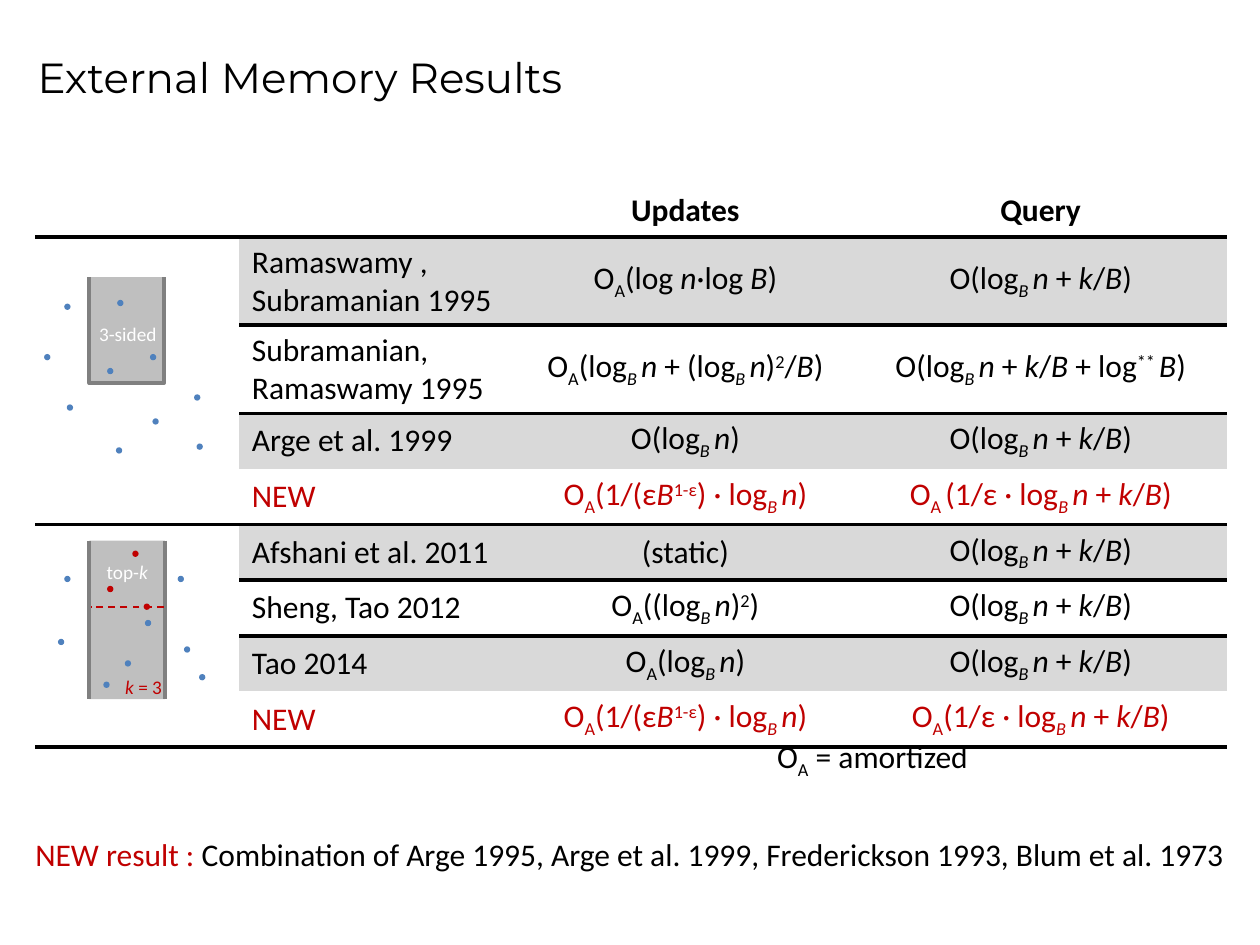
from typing import NamedTuple

from lxml import etree
from pptx import Presentation
from pptx import util as u
from pptx.dml.color import RGBColor
from pptx.enum import dml, shapes, text
from pptx.oxml import ns

COLORS = {
    "black": "000000", "white": "FFFFFF", "red": "C00000", "blue": "4F81BD",
    "band": "D9D9D9", "region": "BFBFBF", "edge": "808080",
}
DOT_SIZE = 0.05
RULE_WIDTH = 2.25


class Box(NamedTuple):
    left: float
    top: float
    width: float
    height: float

    def lengths(self) -> list:
        return [u.Inches(value) for value in self]


class Run(NamedTuple):
    """Markup is split at "|"; "_" lowers, "^" raises and "~" slants a part."""
    markup: str
    color: str = "black"


class Result(NamedTuple):
    source: str
    updates: str
    query: str
    color: str = "black"


LOG_N = "log|_~B |~n"
QUERY = f"O({LOG_N}| + |~k|/|~B|)"
NEW_UPDATES = f"O|_A|(1/(ε|~B|^1-ε|) · {LOG_N}|)"
NEW_QUERY = f"(1/ε · {LOG_N}| + |~k|/|~B|)"
RESULTS = [
    # 3-sided queries
    Result("Ramaswamy , Subramanian 1995", "O|_A|(log |~n|·log |~B|)", QUERY),
    Result("Subramanian, Ramaswamy 1995",
           f"O|_A|({LOG_N} |+ ({LOG_N}|)|^2|/|~B|)",
           f"O({LOG_N}| + |~k|/|~B |+ log|^** |~B|)"),
    Result("Arge et al. 1999", f"O({LOG_N}|)", QUERY),
    Result("NEW", NEW_UPDATES, "O|_A |" + NEW_QUERY, "red"),
    # top-k queries
    Result("Afshani et al. 2011", "(static)", QUERY),
    Result("Sheng, Tao 2012", f"O|_A|(({LOG_N}|)|^2|)", QUERY),
    Result("Tao 2014", f"O|_A|({LOG_N}|)", QUERY),
    Result("NEW", NEW_UPDATES, "O|_A|" + NEW_QUERY, "red"),
]
COLUMN_WIDTHS = [1.62, 2.2, 2.68, 2.96]
ROW_HEIGHT = 0.41
GROUP_SIZE = 4
GROUP_RULES = {0, 4, 8}  # rows with a rule below them in every column
RESULT_RULES = GROUP_RULES | {1, 5}  # the same, right of the first column

THREE_SIDED_DOTS = {"blue": [
    (1.56, 3.52), (0.93, 2.38), (1.21, 3.32), (0.85, 2.92), (0.51, 2.41),
    (0.35, 2.81), (1.54, 3.13), (0.53, 3.21), (0.92, 3.55), (1.19, 2.81),
]}
TOP_K_DOTS = {
    "red": [(1.05, 4.37), (1.14, 4.79), (0.85, 4.65)],
    "blue": [
        (0.82, 5.41), (1.15, 4.92), (0.46, 5.07), (0.99, 5.24), (1.58, 5.35),
        (1.46, 5.13), (1.41, 4.57), (0.51, 4.57),
    ],
}


def rgb(color: str) -> RGBColor:
    return RGBColor.from_string(COLORS[color])


def write(paragraph, run_list: list[Run], size: float, font: str = "Calibri",
          bold: bool = False, center: bool = True) -> None:
    paragraph.alignment = text.PP_ALIGN.CENTER if center else text.PP_ALIGN.LEFT
    for item in run_list:
        for part in item.markup.split("|"):
            baseline = {"_": -25000, "^": 30000}.get(part[0])
            content = part[1:] if baseline else part
            run = paragraph.add_run()
            run.text = content.removeprefix("~")
            run.font.name, run.font.size = font, u.Pt(size)
            run.font.bold, run.font.italic = bold, content.startswith("~")
            run.font.color.rgb = rgb(item.color)
            if baseline:
                run.font._element.set("baseline", str(baseline))


def add_text(parent, box: Box, run_list: list[Run], size: float, font: str = "Calibri",
             center: bool = True, side_margin: float = 0.1):
    frame = parent.add_textbox(*box.lengths()).text_frame
    frame.word_wrap = True
    frame.margin_left = frame.margin_right = u.Inches(side_margin)
    write(frame.paragraphs[0], run_list, size, font, center=center)
    return frame


def set_border(cell, side: str) -> None:
    properties = cell._tc.get_or_add_tcPr()
    line = etree.Element(ns.qn(f"a:ln{side}"), w=str(u.Pt(RULE_WIDTH)))
    fill = etree.SubElement(line, ns.qn("a:solidFill"))
    etree.SubElement(fill, ns.qn("a:srgbClr"), val=COLORS["black"])
    borders = properties.findall(ns.qn("a:lnT"))
    properties.insert(len(borders), line)


def add_results_table(slide) -> None:
    box = Box(0.28, 1.47, sum(COLUMN_WIDTHS), ROW_HEIGHT * (len(RESULTS) + 1))
    frame = slide.shapes.add_table(len(RESULTS) + 1, len(COLUMN_WIDTHS), *box.lengths())
    table = frame.table
    table.first_row = table.horz_banding = False
    # No style, no grid
    style = table._tbl.tblPr.find(ns.qn("a:tableStyleId"))
    style.text = "{2D5ABB26-0587-4C30-8999-92F81FD0307C}"
    for column, width in zip(table.columns, COLUMN_WIDTHS):
        column.width = u.Inches(width)
    for row in table.rows:
        row.height = u.Inches(ROW_HEIGHT)

    # Header and result text
    for column, heading in enumerate(["Updates", "Query"], start=2):
        write(table.cell(0, column).text_frame.paragraphs[0], [Run(heading)], 18, bold=True)
    for row, result in enumerate(RESULTS, start=1):
        for column, markup in enumerate(result[:3], start=1):
            cell = table.cell(row, column)
            cell.vertical_anchor = text.MSO_ANCHOR.MIDDLE
            write(cell.text_frame.paragraphs[0], [Run(markup, result.color)], 18,
                  center=column > 1)

    # Bands and rules
    for row in range(len(RESULTS) + 1):
        for column in range(len(COLUMN_WIDTHS)):
            cell = table.cell(row, column)
            if row % 2 and column:
                cell.fill.solid()
                cell.fill.fore_color.rgb = rgb("band")
            else:
                cell.fill.background()
            rules = RESULT_RULES if column else GROUP_RULES
            if row - 1 in rules:
                set_border(cell, "T")
            if row in rules:
                set_border(cell, "B")

    # Cells that hold the diagrams
    for first in range(1, len(RESULTS), GROUP_SIZE):
        last = table.cell(first + GROUP_SIZE - 1, 0)
        table.cell(first, 0).merge(last)
        set_border(table.cell(first, 0), "B")


def fill_shape(shape, color: str) -> None:
    shape.shadow.inherit = False
    shape.fill.solid()
    shape.fill.fore_color.rgb = rgb(color)
    shape.line.fill.background()


def add_dots(parent, dots: dict[str, list]) -> None:
    for color, places in dots.items():
        for left, top in places:
            box = Box(left, top, DOT_SIZE, DOT_SIZE)
            fill_shape(parent.add_shape(shapes.MSO_SHAPE.OVAL, *box.lengths()), color)


def add_line(parent, start: tuple, end: tuple, color: str, width: float):
    points = [u.Inches(value) for value in (*start, *end)]
    connector = parent.add_connector(shapes.MSO_CONNECTOR.STRAIGHT, *points)
    connector.line.color.rgb = rgb(color)
    connector.line.width = u.Pt(width)
    etree.SubElement(connector._element.spPr, ns.qn("a:effectLst"))
    return connector


def add_three_sided_diagram(slide) -> None:
    parent = slide.shapes.add_group_shape().shapes
    builder = parent.build_freeform(u.Inches(0.71), u.Inches(2.2), scale=1.0)
    corners = [(0.71, 3.04), (1.3, 3.04), (1.3, 2.2)]
    builder.add_line_segments([(u.Inches(x), u.Inches(y)) for x, y in corners], close=False)
    region = builder.convert_to_shape()
    fill_shape(region, "region")
    region.line.color.rgb = rgb("edge")
    region.line.width = u.Pt(RULE_WIDTH)
    add_text(parent, Box(0.71, 2.51, 0.61, 0.29), [Run("3-sided", "white")], 11, side_margin=0)
    add_dots(parent, THREE_SIDED_DOTS)


def add_top_k_diagram(slide) -> None:
    parent = slide.shapes.add_group_shape().shapes
    region = Box(0.71, 4.29, 0.6, 1.26)
    fill_shape(parent.add_shape(shapes.MSO_SHAPE.RECTANGLE, *region.lengths()), "region")
    for x in (region.left, region.left + region.width):
        add_line(parent, (x, 4.29), (x, 5.55), "edge", RULE_WIDTH)
    add_text(parent, Box(0.71, 4.4, 0.6, 0.29), [Run("top-|~k", "white")], 11)
    threshold = add_line(parent, (1.3, 4.82), (0.72, 4.82), "red", 1)
    threshold.line.dash_style = dml.MSO_LINE.DASH
    add_dots(parent, TOP_K_DOTS)
    add_text(parent, Box(0.84, 5.31, 0.6, 0.29), [Run("~k| = 3", "red")], 11)


def main() -> None:
    presentation = Presentation()
    presentation.slide_width, presentation.slide_height = u.Inches(10), u.Inches(7.5)
    slide = presentation.slides.add_slide(presentation.slide_layouts[6])
    title = add_text(slide.shapes, Box(0.2, 0.3, 6.3, 0.61), [Run("External Memory Results")],
                     24, "Montserrat", center=False)
    title.vertical_anchor = text.MSO_ANCHOR.MIDDLE
    add_results_table(slide)
    add_text(slide.shapes, Box(4.21, 5.8, 5.43, 0.4), [Run("O|_A| = amortized")], 18)
    add_three_sided_diagram(slide)
    add_top_k_diagram(slide)
    credits = " Combination of Arge 1995, Arge et al. 1999, Frederickson 1993, Blum et al. 1973"
    add_text(slide.shapes, Box(0, 6.58, 10, 0.4), [Run("NEW result :", "red"), Run(credits)], 18)
    presentation.save("out.pptx")


if __name__ == "__main__":
    main()
